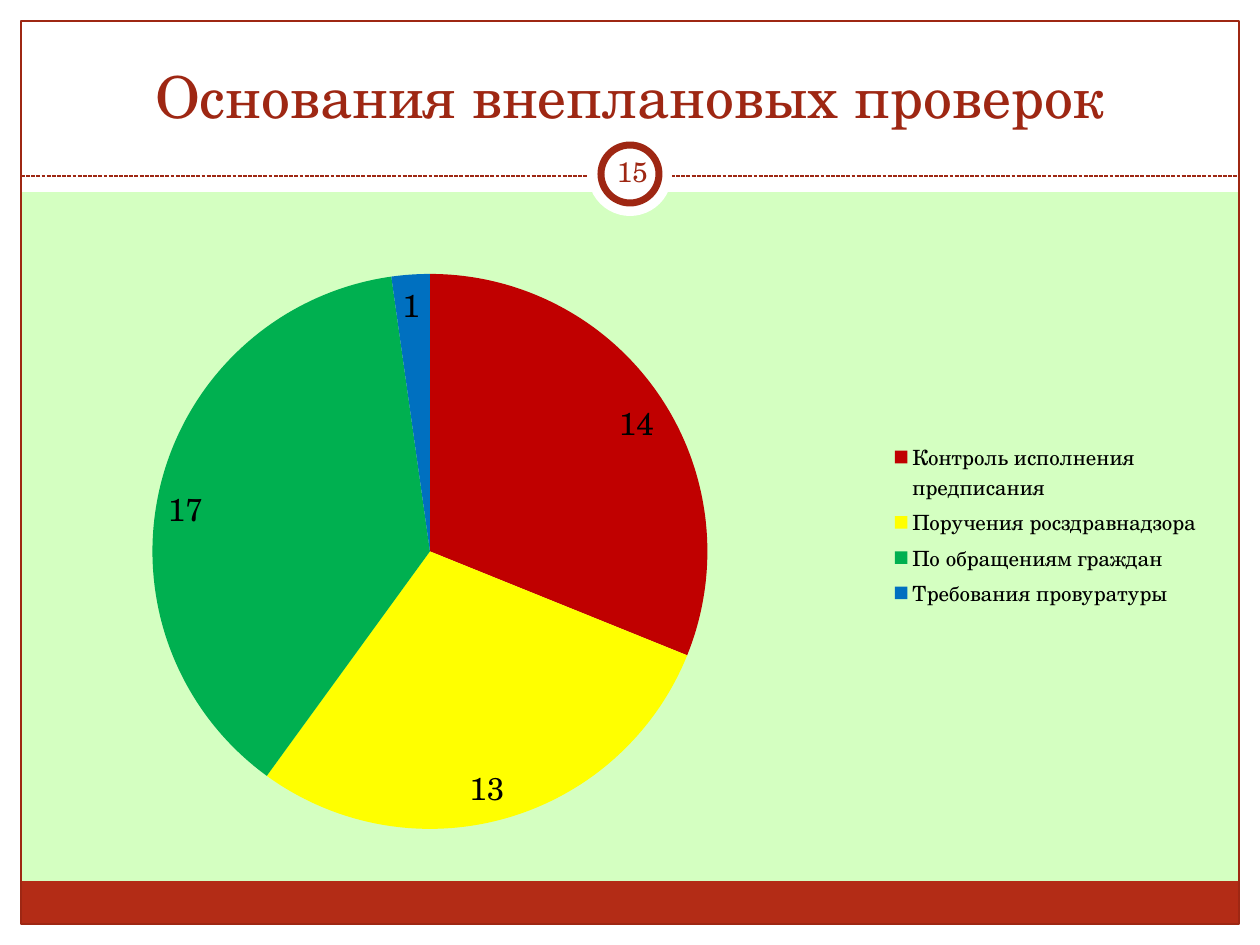
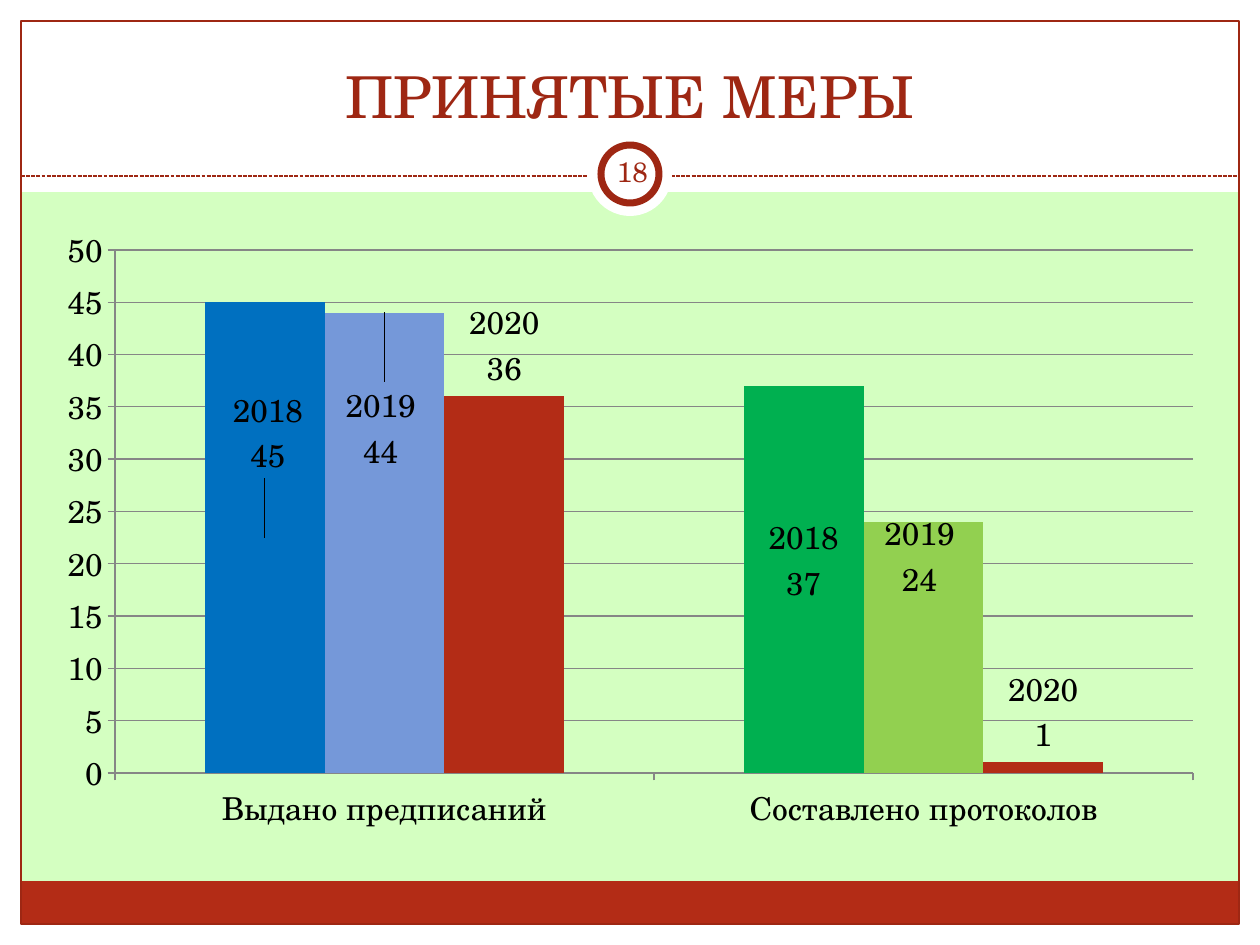
from copy import deepcopy

from lxml import etree
from pptx import Presentation
from pptx import util as u
from pptx.chart.data import CategoryChartData
from pptx.dml.color import RGBColor
from pptx.enum import chart as charts, dml, shapes, text
from pptx.oxml import parse_xml
from pptx.oxml.ns import nsdecls, qn

PX = 914400 / 126
WIDTH, HEIGHT = 1260, 945
MARGIN = 21
FONT = "TeX Gyre Schola"
WHITE, BLACK, GREY = "FFFFFF", "000000", "868686"
MINT, BRICK, BORDER = "D4FFC1", "B32C16", "9E2713"


def px(*lengths):
    """Turn pixel lengths into EMU."""
    return [u.Emu(round(length * PX)) for length in lengths]


def colour(value):
    """Turn a hex string into a colour."""
    return RGBColor.from_string(value)


def paint(filled, value):
    """Give an element a solid fill."""
    filled.fill.solid()
    filled.fill.fore_color.rgb = colour(value)


def stroke(line, value, width=0.75):
    """Set the colour and width of a line."""
    line.color.rgb = colour(value)
    line.width = u.Pt(width)


def style_font(font, size, value):
    """Set the shared typeface with a size and colour."""
    font.name, font.size, font.bold = FONT, u.Pt(size), False
    font.color.rgb = colour(value)


def add_figure(slide, kind, box, fill=None, line=None, width=0.75):
    """Add a flat preset shape."""
    figure = slide.shapes.add_shape(kind, *px(*box))
    figure.shadow.inherit = False
    if fill:
        paint(figure, fill)
    else:
        figure.fill.background()
    if line:
        stroke(figure.line, line, width)
    else:
        figure.line.fill.background()
    return figure


def add_divider(slide, y):
    """Add the dashed line under the title."""
    divider = slide.shapes.add_connector(
        shapes.MSO_CONNECTOR.STRAIGHT, *px(MARGIN, y, WIDTH - MARGIN, y))
    stroke(divider.line, BORDER)
    divider.line.dash_style = dml.MSO_LINE.SQUARE_DOT
    etree.SubElement(divider.element.spPr, qn("a:effectLst"))
    return divider


def build_layout(layout, slide):
    """Draw the common frame and hand it over to the layout."""
    layout.background.fill.solid()
    layout.background.fill.fore_color.rgb = colour(MINT)
    rect, oval = shapes.MSO_SHAPE.RECTANGLE, shapes.MSO_SHAPE.OVAL
    edges = [(0, HEIGHT - MARGIN, WIDTH, MARGIN), (0, 0, WIDTH, 192),
             (0, 0, MARGIN, HEIGHT), (WIDTH - MARGIN, 0, MARGIN, HEIGHT)]
    inner_width = WIDTH - 2 * MARGIN
    frame = [add_figure(slide, rect, edge, WHITE) for edge in edges]
    frame += [
        add_figure(slide, rect, (MARGIN, 881, inner_width, 43), BRICK),
        add_figure(slide, rect, (MARGIN, MARGIN, inner_width, HEIGHT - 2 * MARGIN),
                   line=BORDER),
        add_divider(slide, 176),
        add_figure(slide, oval, (588, 132, 84, 84), WHITE),
        add_figure(slide, oval, (601, 145, 58, 58), WHITE, BORDER, 4),
    ]
    for number, part in enumerate(frame, 100):
        part.element.xpath(".//p:cNvPr")[0].set("id", str(number))
        layout.shapes.element.append(part.element)


def write_line(frame, words, size, anchor):
    """Write one centred line in the border colour."""
    frame.text = words
    frame.word_wrap = True
    frame.auto_size = text.MSO_AUTO_SIZE.NONE
    frame.vertical_anchor = anchor
    paragraph = frame.paragraphs[0]
    paragraph.alignment = text.PP_ALIGN.CENTER
    style_font(paragraph.font, size, BORDER)


def add_heading(slide, title, number):
    """Fill the title and the number in the ring."""
    heading = slide.shapes.title
    heading.left, heading.top, heading.width, heading.height = px(42, 31, 1176, 105)
    write_line(heading.text_frame, title, 33, text.MSO_ANCHOR.BOTTOM)
    ring = slide.shapes.add_textbox(*px(601, 141, 63, 60)).text_frame
    ring.margin_left, ring.margin_top, ring.margin_right, ring.margin_bottom = px(6, 6, 6, 6)
    write_line(ring, number, 16, text.MSO_ANCHOR.MIDDLE)


def manual_layout(x, y, size=None):
    """Make a layout element from fractions of the chart."""
    values = {"x": x, "y": y}
    head = ""
    if size:
        head = ('<c:layoutTarget val="inner"/><c:xMode val="edge"/>'
                '<c:yMode val="edge"/>')
        values.update(w=size[0], h=size[1])
    body = "".join(f'<c:{key} val="{value:.4f}"/>' for key, value in values.items())
    return parse_xml(f'<c:layout {nsdecls("c")}><c:manualLayout>{head}{body}'
                     '</c:manualLayout></c:layout>')


def add_data_chart(slide, kind, box, plot_box, categories, series):
    """Add a chart whose plot area sits at a given place on the slide."""
    data = CategoryChartData()
    data.categories = categories
    for name, values in series.items():
        data.add_series(name, values)
    chart = slide.shapes.add_chart(kind, *px(*box), data).chart
    style_font(chart.font, 18, BLACK)
    chart.has_title = chart.has_legend = False
    left, top, width, height = box
    x, y, plot_width, plot_height = plot_box
    area = chart.element.xpath("//c:plotArea")[0]
    for automatic in area.findall(qn("c:layout")):
        area.remove(automatic)
    area.insert(0, manual_layout((x - left) / width, (y - top) / height,
                                 (plot_width / width, plot_height / height)))
    return chart


def add_grounds_pie(slide):
    """Show the grounds of inspections as a pie."""
    grounds = ["Контроль исполнения предписания", "Поручения росздравнадзора",
               "По обращениям граждан", "Требования провуратуры"]
    chart = add_data_chart(slide, charts.XL_CHART_TYPE.PIE, (42, 210, 1172, 630),
                           (46, 274, 768, 555), grounds,
                           {"Series 1": (14, 13, 17, 1)})
    chart.plots[0].vary_by_categories = True
    chart.has_legend = True
    chart.legend.position = charts.XL_LEGEND_POSITION.RIGHT
    chart.legend.include_in_layout = False
    style_font(chart.legend.font, 12, BLACK)
    inspections = chart.series[0]
    for index, shade in enumerate(["C00000", "FFFF00", "00B050", "0070C0"]):
        paint(inspections.points[index].format, shade)
    inspections.data_labels.show_value = True
    inspections.data_labels.position = charts.XL_LABEL_POSITION.INSIDE_END


def shift_label(labels, index, x, y):
    """Move one point's label by fractions of the chart."""
    label = parse_xml(f'<c:dLbl {nsdecls("c")}><c:idx val="{index}"/></c:dLbl>')
    label.append(manual_layout(x, y))
    skipped = {qn("c:dLbl"), qn("c:showLeaderLines")}
    label.extend([deepcopy(part) for part in labels if part.tag not in skipped])
    labels.insert(index, label)


def label_year(chart, year, position, shifts):
    """Label a year's columns with year and value on two lines."""
    series = chart.series[year]
    series.data_labels.show_value = True
    series.data_labels.show_series_name = True
    series.data_labels.position = position
    labels = chart.element.xpath("//c:ser/c:dLbls")[year]
    separator = etree.Element(qn("c:separator"))
    separator.text = "\n"
    labels.find(qn("c:showBubbleSize")).addnext(separator)
    for index, (x, y) in enumerate(shifts):
        shift_label(labels, index, x / 1172, y / 630)


def add_measures_chart(slide):
    """Compare the measures taken over three years."""
    chart = add_data_chart(
        slide, charts.XL_CHART_TYPE.COLUMN_CLUSTERED, (44, 214, 1172, 630),
        (115, 250, 1078, 523), ["Выдано предписаний", "Составлено протоколов"],
        {"2018": (45, 37), "2019": (44, 24), "2020": (36, 1)})
    plot = chart.plots[0]
    plot.gap_width, plot.overlap, plot.vary_by_categories = 150, 0, False
    amounts = chart.value_axis
    amounts.minimum_scale, amounts.maximum_scale, amounts.major_unit = 0, 50, 5
    stroke(amounts.major_gridlines.format.line, GREY)
    for axis in (amounts, chart.category_axis):
        axis.major_tick_mark = charts.XL_TICK_MARK.OUTSIDE
        stroke(axis.format.line, GREY)
    center, outside = charts.XL_LABEL_POSITION.CENTER, charts.XL_LABEL_POSITION.OUTSIDE_END
    years = [
        ("3668C4", ("0070C0", "00B050"), center, [(3, -105), (0, -19)]),
        ("ACC1E8", ("7598D9", "92D050"), outside, [(-4, 166), (-4, 85)]),
        (BRICK, (), outside, []),
    ]
    for year, (shade, point_shades, position, shifts) in enumerate(years):
        paint(chart.series[year].format, shade)
        for index, point_shade in enumerate(point_shades):
            paint(chart.series[year].points[index].format, point_shade)
        label_year(chart, year, position, shifts)


def main():
    """Build and save the presentation."""
    deck = Presentation()
    deck.slide_width, deck.slide_height = px(WIDTH, HEIGHT)
    title_only = deck.slide_layouts[5]
    grounds, measures = [deck.slides.add_slide(title_only) for _ in range(2)]
    build_layout(title_only, grounds)
    add_heading(grounds, "Основания внеплановых проверок", "15")
    add_grounds_pie(grounds)
    add_heading(measures, "ПРИНЯТЫЕ МЕРЫ", "18")
    add_measures_chart(measures)
    deck.save("out.pptx")


if __name__ == "__main__":
    main()
